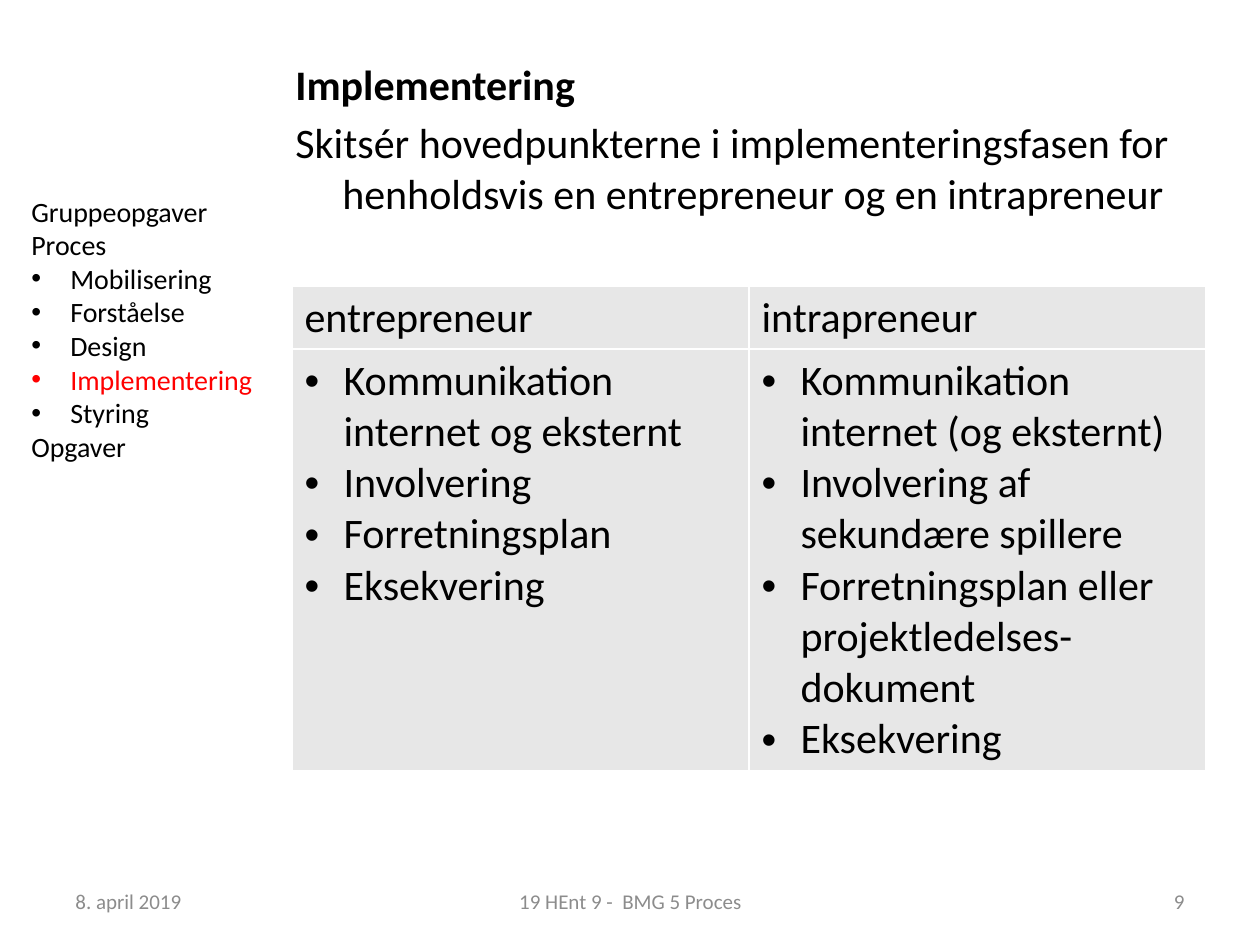
from lxml import etree
from pptx import Presentation
from pptx.dml.color import RGBColor
from pptx.enum.text import MSO_ANCHOR, PP_ALIGN
from pptx.oxml.ns import qn
from pptx.util import Pt

BLACK = RGBColor(0x00, 0x00, 0x00)
RED = RGBColor(0xFF, 0x00, 0x00)
GRAY = RGBColor(0x8C, 0x8C, 0x8C)
LIGHT_GRAY = RGBColor(0xE7, 0xE7, 0xE7)
WHITE = RGBColor(0xFF, 0xFF, 0xFF)
LEFT, CENTER, RIGHT = PP_ALIGN.LEFT, PP_ALIGN.CENTER, PP_ALIGN.RIGHT
TOP, MIDDLE = MSO_ANCHOR.TOP, MSO_ANCHOR.MIDDLE

FONT = "Calibri"
PX = 914400 / 126
WIDTH, HEIGHT = 1260, 945
BULLET_INDENT = 39
HANGING_INDENT = 47

HEADING = "Implementering"
TASK = ("Skitsér hovedpunkterne i implementeringsfasen for "
        "henholdsvis en entrepreneur og en intrapreneur")

COLUMNS = [
    ("entrepreneur", [
        "Kommunikation internet og eksternt",
        "Involvering",
        "Forretningsplan",
        "Eksekvering",
    ]),
    ("intrapreneur", [
        "Kommunikation internet (og eksternt)",
        "Involvering af sekundære spillere",
        "Forretningsplan eller projektledelses-dokument",
        "Eksekvering",
    ]),
]
TABLE_LEFT, TABLE_TOP, COLUMN_WIDTH = 292, 286, 457
ROW_HEIGHTS = [63, 422]

AGENDA = [
    ("Gruppeopgaver", False),
    ("Proces", False),
    ("Mobilisering", True),
    ("Forståelse", True),
    ("Design", True),
    ("Implementering", True),
    ("Styring", True),
    ("Opgaver", False),
]
CURRENT = "Implementering"

FOOTERS = [
    ("8. april 2019", 63, 294, LEFT),
    ("19 HEnt 9 -  BMG 5 Proces", 431, 399, CENTER),
    ("9", 903, 294, RIGHT),
]
FOOTER_TOP, FOOTER_HEIGHT = 876, 50


def emu(px):
    return round(px * PX)


def add_text_box(slide, left, top, width, height, anchor=TOP):
    frame = slide.shapes.add_textbox(*map(emu, (left, top, width, height))).text_frame
    frame.word_wrap = True
    frame.vertical_anchor = anchor
    return frame


def add_paragraph(frame, text, size, color=BLACK, bold=False, indent=0, bullet=False):
    first = frame.paragraphs[0]
    paragraph = frame.add_paragraph() if first.runs else first
    run = paragraph.add_run()
    run.text = text
    run.font.name = FONT
    run.font.size = Pt(size)
    run.font.bold = bold
    run.font.color.rgb = color
    properties = paragraph._p.get_or_add_pPr()
    if bullet:
        indent = BULLET_INDENT
        etree.SubElement(properties, qn("a:buFont"), typeface="Arial")
        etree.SubElement(properties, qn("a:buChar"), char="•")
    if indent:
        properties.set("marL", str(emu(indent)))
        properties.set("indent", str(-emu(indent)))
    return paragraph


def style_cell(cell):
    properties = cell._tc.get_or_add_tcPr()
    for side in ("lnL", "lnR", "lnT", "lnB"):
        line = etree.SubElement(properties, qn(f"a:{side}"), w=str(Pt(1)))
        fill = etree.SubElement(line, qn("a:solidFill"))
        etree.SubElement(fill, qn("a:srgbClr"), val=str(WHITE))
    cell.fill.solid()
    cell.fill.fore_color.rgb = LIGHT_GRAY


def add_comparison(slide):
    table = slide.shapes.add_table(
        len(ROW_HEIGHTS), len(COLUMNS), emu(TABLE_LEFT), emu(TABLE_TOP),
        emu(COLUMN_WIDTH * len(COLUMNS)), emu(sum(ROW_HEIGHTS))).table
    for row, height in zip(table.rows, ROW_HEIGHTS):
        row.height = emu(height)
    for index, (title, points) in enumerate(COLUMNS):
        table.columns[index].width = emu(COLUMN_WIDTH)
        header, body = table.cell(0, index), table.cell(1, index)
        style_cell(header)
        style_cell(body)
        add_paragraph(header.text_frame, title, 24)
        for point in points:
            add_paragraph(body.text_frame, point, 24, bullet=True)


def main():
    presentation = Presentation()
    presentation.slide_width = emu(WIDTH)
    presentation.slide_height = emu(HEIGHT)
    slide = presentation.slides.add_slide(presentation.slide_layouts[6])

    body = add_text_box(slide, 283, 52, 942, 810)
    for text, bold in ((HEADING, True), (TASK, False)):
        paragraph = add_paragraph(body, text, 24, bold=bold, indent=HANGING_INDENT)
        paragraph.space_before = Pt(4.8)

    add_comparison(slide)

    agenda = add_text_box(slide, 19, 188, 276, 323)
    for text, bullet in AGENDA:
        color = RED if text == CURRENT else BLACK
        add_paragraph(agenda, text, 16, color, bullet=bullet)

    for text, left, width, alignment in FOOTERS:
        footer = add_text_box(slide, left, FOOTER_TOP, width, FOOTER_HEIGHT, MIDDLE)
        add_paragraph(footer, text, 12, GRAY).alignment = alignment

    presentation.save("out.pptx")


if __name__ == "__main__":
    main()
